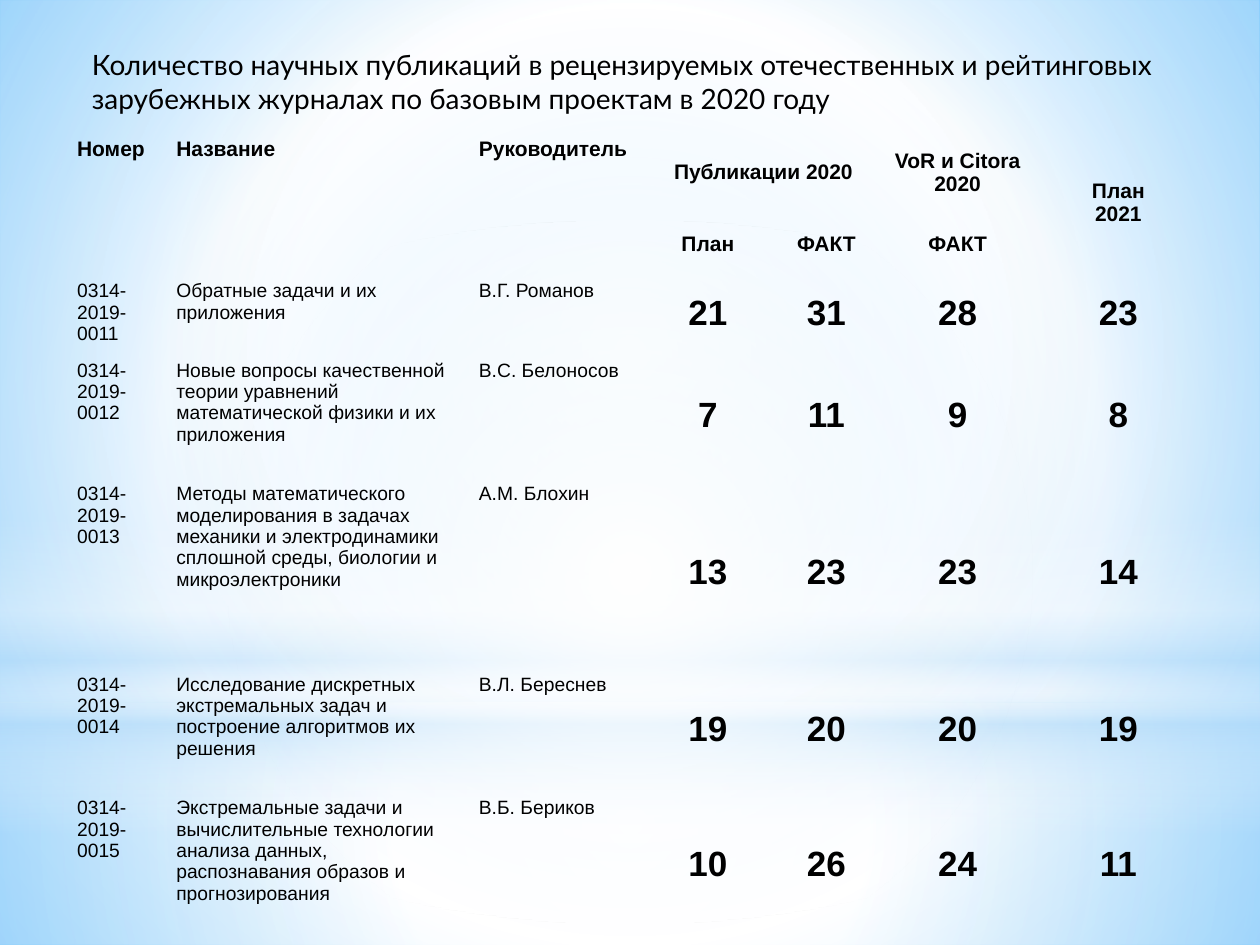
from dataclasses import dataclass

from lxml import etree
from pptx import Presentation
from pptx.dml.color import RGBColor
from pptx.enum.shapes import MSO_SHAPE
from pptx.enum.text import MSO_ANCHOR, MSO_AUTO_SIZE, PP_ALIGN
from pptx.oxml.ns import qn
from pptx.slide import Slide
from pptx.table import Table
from pptx.util import Cm, Pt

RECTANGLE, OVAL = MSO_SHAPE.RECTANGLE, MSO_SHAPE.OVAL
TOP, MIDDLE = MSO_ANCHOR.TOP, MSO_ANCHOR.MIDDLE
LEFT, CENTER = PP_ALIGN.LEFT, PP_ALIGN.CENTER
NO_AUTOFIT = MSO_AUTO_SIZE.NONE

BLACK = RGBColor(0x00, 0x00, 0x00)
WHITE = RGBColor(0xFF, 0xFF, 0xFF)
HAZE_BLUE = RGBColor(0xB4, 0xDC, 0xFA)
SKY_BLUE = RGBColor(0x99, 0xD4, 0xFE)
DEEP_BLUE = RGBColor(0x54, 0xBD, 0xFF)

TITLE_ONLY_LAYOUT = 5
PLAIN_TABLE_STYLE = "{2D5ABB26-0587-4C30-8999-92F81FD0307C}"
SLIDE_WIDTH, SLIDE_HEIGHT = 25.4, 19.05
HORIZON = 14.17
FIRST_NUMBER_COLUMN = 3
COLUMN_WIDTHS = (2.0, 6.1, 3.6, 2.54, 2.24, 3.05, 3.43)
ROW_HEIGHTS = (1.68, 1.19, 1.6, 2.49, 3.84, 2.49, 2.95)
TITLE = ("Количество научных публикаций в рецензируемых отечественных и рейтинговых "
         "зарубежных журналах по базовым проектам в 2020 году")


@dataclass(frozen=True)
class Stop:
    position: int
    color: RGBColor
    opacity: int = 100


@dataclass(frozen=True)
class Glow:
    kind: int
    top: float
    height: float
    stops: tuple[Stop, ...]
    radial: bool = True


@dataclass(frozen=True)
class Project:
    number: str
    name: str
    leader: str
    counts: tuple[int, int, int, int]


BACKGROUND = (Stop(0, SKY_BLUE), Stop(60, WHITE), Stop(100, DEEP_BLUE))
GLOWS = (
    Glow(RECTANGLE, HORIZON, SLIDE_HEIGHT - HORIZON,
         (Stop(0, WHITE, 90), Stop(37, WHITE, 75), Stop(100, HAZE_BLUE, 78))),
    Glow(RECTANGLE, 0, HORIZON,
         (Stop(0, WHITE, 87), Stop(48, WHITE, 61), Stop(100, HAZE_BLUE, 78))),
    Glow(RECTANGLE, 10.46, 6.35,
         (Stop(0, WHITE, 0), Stop(29, WHITE, 29), Stop(45, HAZE_BLUE, 40),
          Stop(55, WHITE, 25), Stop(65, HAZE_BLUE, 60), Stop(100, WHITE, 0)), radial=False),
    Glow(OVAL, 4.45, HORIZON, (Stop(0, WHITE), Stop(56, WHITE, 0), Stop(100, WHITE, 0))),
)
HEADERS = (
    ("Номер", "Название", "Руководитель", "Публикации 2020", "", "VoR и Citora 2020", "План\n2021"),
    ("", "", "", "План", "ФАКТ", "ФАКТ", ""),
)
PROJECTS = (
    Project("0011", "Обратные задачи и их приложения", "В.Г. Романов", (21, 31, 28, 23)),
    Project("0012", "Новые вопросы качественной теории уравнений математической физики "
            "и их приложения", "В.С. Белоносов", (7, 11, 9, 8)),
    Project("0013", "Методы математического моделирования в задачах механики и "
            "электродинамики сплошной среды, биологии и микроэлектроники",
            "А.М. Блохин", (13, 23, 23, 14)),
    Project("0014", "Исследование дискретных экстремальных задач и построение алгоритмов "
            "их решения", "В.Л. Береснев", (19, 20, 20, 19)),
    Project("0015", "Экстремальные задачи и вычислительные технологии анализа данных, "
            "распознавания образов и прогнозирования", "В.Б. Бериков", (10, 26, 24, 11)),
)


def apply_gradient(element: etree.ElementBase, stops: tuple[Stop, ...], radial: bool) -> None:
    """Replace the first solid fill inside element with a gradient."""
    gradient = etree.Element(qn("a:gradFill"), rotWithShape="1")
    stop_list = etree.SubElement(gradient, qn("a:gsLst"))
    for stop in stops:
        entry = etree.SubElement(stop_list, qn("a:gs"), pos=str(stop.position * 1000))
        color = etree.SubElement(entry, qn("a:srgbClr"), val=str(stop.color))
        if stop.opacity < 100:
            etree.SubElement(color, qn("a:alpha"), val=str(stop.opacity * 1000))
    if radial:
        center = etree.SubElement(gradient, qn("a:path"), path="circle")
        etree.SubElement(center, qn("a:fillToRect"), dict.fromkeys("ltrb", "50000"))
    else:
        etree.SubElement(gradient, qn("a:lin"), ang="5400000", scaled="0")
    solid = element.find(".//" + qn("a:solidFill"))
    solid.getparent().replace(solid, gradient)


def draw_backdrop(slide: Slide) -> None:
    fill = slide.background.fill
    fill.solid()
    fill.fore_color.rgb = WHITE
    apply_gradient(slide.element.find(".//" + qn("p:bgPr")), BACKGROUND, radial=True)
    for glow in GLOWS:
        shape = slide.shapes.add_shape(
            glow.kind, 0, Cm(glow.top), Cm(SLIDE_WIDTH), Cm(glow.height))
        shape.shadow.inherit = False
        shape.line.fill.background()
        shape.fill.solid()
        shape.fill.fore_color.rgb = WHITE
        apply_gradient(shape.element, glow.stops, glow.radial)


def place_title(slide: Slide) -> None:
    title = slide.shapes.title
    title.element.getparent().append(title.element)  # in front of the backdrop
    title.left, title.top, title.width, title.height = Cm(1.6), Cm(0.84), Cm(22.23), Cm(1.9)
    frame = title.text_frame
    frame.text = TITLE
    frame.word_wrap = True
    frame.auto_size = NO_AUTOFIT
    frame.vertical_anchor = TOP
    paragraph = frame.paragraphs[0]
    paragraph.alignment = LEFT
    paragraph.font.name = "Lato"
    paragraph.font.size = Pt(16)
    paragraph.font.color.rgb = BLACK


def write_cell(table: Table, row: int, column: int, text: str) -> None:
    is_header = row < len(HEADERS)
    is_number = column >= FIRST_NUMBER_COLUMN
    cell = table.cell(row, column)
    cell.fill.background()
    cell.vertical_anchor = MIDDLE if is_number else TOP
    cell.text = text
    for paragraph in cell.text_frame.paragraphs:
        paragraph.alignment = CENTER if is_number else LEFT
        paragraph.font.name = "Arial"
        paragraph.font.size = Pt(12 if is_header else 20 if is_number else 11)
        paragraph.font.bold = is_header or is_number
        paragraph.font.color.rgb = BLACK


def add_publications_table(slide: Slide) -> None:
    frame = slide.shapes.add_table(
        len(ROW_HEIGHTS), len(COLUMN_WIDTHS), Cm(1.3), Cm(2.64),
        Cm(sum(COLUMN_WIDTHS)), Cm(sum(ROW_HEIGHTS)))
    table = frame.table
    table.first_row = table.horz_banding = False
    frame.element.find(".//" + qn("a:tableStyleId")).text = PLAIN_TABLE_STYLE
    for column, width in zip(table.columns, COLUMN_WIDTHS):
        column.width = Cm(width)
    for row, height in zip(table.rows, ROW_HEIGHTS):
        row.height = Cm(height)

    project_rows = tuple(
        (f"0314-\n2019-\n{project.number}", project.name, project.leader,
         *map(str, project.counts))
        for project in PROJECTS)
    for row, texts in enumerate(HEADERS + project_rows):
        for column, text in enumerate(texts):
            write_cell(table, row, column, text)
    for column in (0, 1, 2, 6):
        table.cell(0, column).merge(table.cell(1, column))
    table.cell(0, 3).merge(table.cell(0, 4))


def main() -> None:
    presentation = Presentation()
    presentation.slide_width, presentation.slide_height = Cm(SLIDE_WIDTH), Cm(SLIDE_HEIGHT)
    slide = presentation.slides.add_slide(presentation.slide_layouts[TITLE_ONLY_LAYOUT])
    draw_backdrop(slide)
    place_title(slide)
    add_publications_table(slide)
    presentation.save("out.pptx")


if __name__ == "__main__":
    main()
